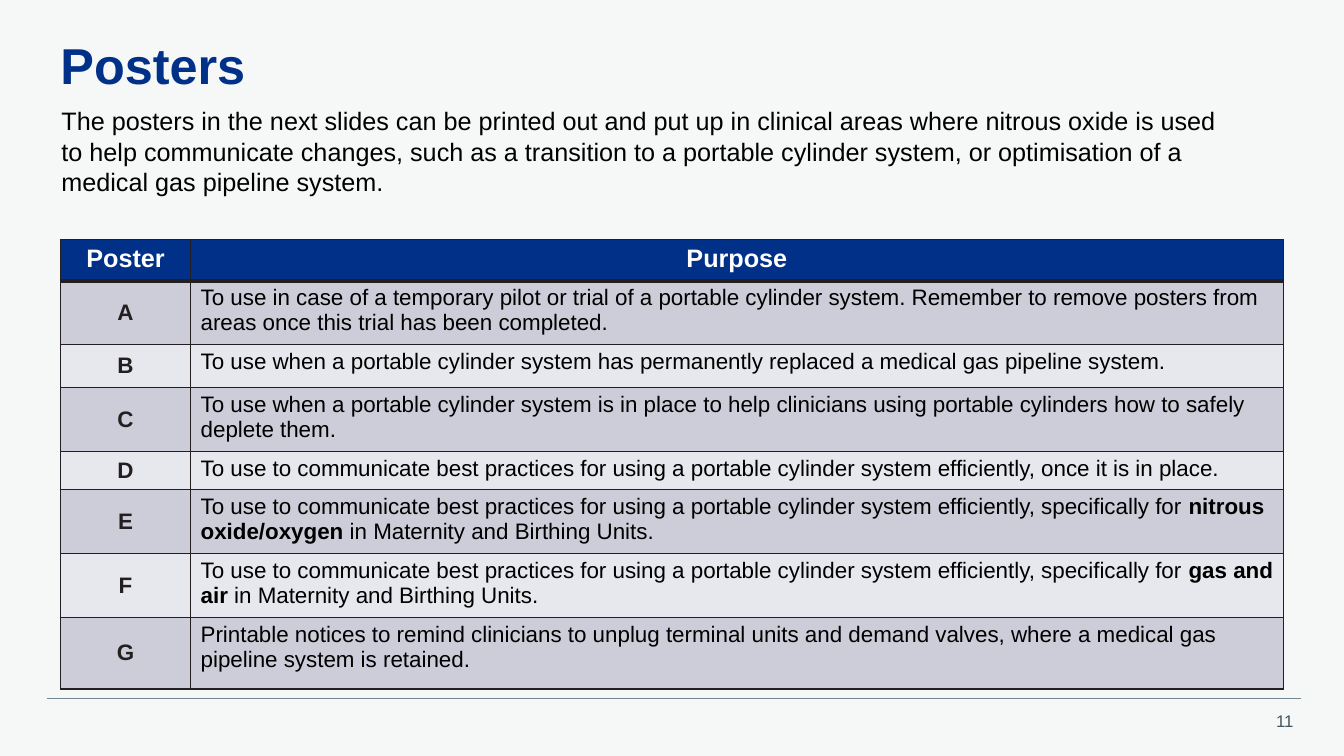
from lxml.etree import SubElement
from pptx import Presentation
from pptx.dml.color import RGBColor
from pptx.enum.shapes import MSO_CONNECTOR
from pptx.enum.text import MSO_ANCHOR, PP_ALIGN
from pptx.oxml import parse_xml
from pptx.oxml.ns import nsdecls, qn
from pptx.util import Inches, Pt

NAVY, INK, BLACK, WHITE = "003087", "231F20", "000000", "FFFFFF"
BANDS = ("CCCDD9", "E7E8ED")
EFFICIENT = ("To use to communicate best practices for using a portable "
             "cylinder system efficiently, ")

# Poster, purpose (** switches bold), row height in % of the slide
POSTERS = [
    ("A", "To use in case of a temporary pilot or trial of a portable cylinder "
          "system. Remember to remove posters from areas once this trial has "
          "been completed.", 8.4),
    ("B", "To use when a portable cylinder system has permanently replaced a "
          "medical gas pipeline system.", 5.7),
    ("C", "To use when a portable cylinder system is in place to help clinicians "
          "using portable cylinders how to safely deplete them.", 8.4),
    ("D", EFFICIENT + "once it is in place.", 5.07),
    ("E", EFFICIENT + "specifically for **nitrous oxide/oxygen **in Maternity "
          "and Birthing Units.", 8.4),
    ("F", EFFICIENT + "specifically for **gas and air **in Maternity and "
          "Birthing Units.", 8.4),
    ("G", "Printable notices to remind clinicians to unplug terminal units and "
          "demand valves, where a medical gas pipeline system is retained.", 9.47),
]


def color(value):
    return RGBColor.from_string(value)


def write(frame, text, size=16, ink=BLACK, bold=False, align=PP_ALIGN.LEFT,
          spacing=None):
    """Write one paragraph; each ** in the text switches bold."""
    paragraph = frame.paragraphs[0]
    paragraph.alignment = align
    if spacing:
        paragraph.line_spacing = spacing
    for index, part in enumerate(text.split("**")):
        run = paragraph.add_run()
        run.text = part
        run.font.name = "Arial"
        run.font.size = Pt(size)
        run.font.bold = bold != bool(index % 2)
        run.font.color.rgb = color(ink)


class PosterSlide:
    """Places elements by percentages of the slide's width and height."""

    def __init__(self, deck, background):
        self.width, self.height = deck.slide_width, deck.slide_height
        self.slide = deck.slides.add_slide(deck.slide_layouts[6])
        fill = self.slide.background.fill
        fill.solid()
        fill.fore_color.rgb = color(background)

    def x(self, share):
        return round(self.width * share / 100)

    def y(self, share):
        return round(self.height * share / 100)

    def text(self, left, top, width, height, content, inset=None,
             anchor=MSO_ANCHOR.TOP, **style):
        box = self.slide.shapes.add_textbox(
            self.x(left), self.y(top), self.x(width), self.y(height))
        frame = box.text_frame
        frame.word_wrap = True
        frame.vertical_anchor = anchor
        if inset is not None:
            frame.margin_left = frame.margin_right = inset
            frame.margin_top = frame.margin_bottom = inset
        write(frame, content, **style)

    def rule(self, left, right, top, ink, weight):
        rule = self.slide.shapes.add_connector(
            MSO_CONNECTOR.STRAIGHT, self.x(left), self.y(top),
            self.x(right), self.y(top))
        rule.line.color.rgb = color(ink)
        rule.line.width = Pt(weight)
        SubElement(rule._element.spPr, qn("a:effectLst"))

    def table(self, left, top, widths, heights):
        table = self.slide.shapes.add_table(
            len(heights), len(widths), self.x(left), self.y(top),
            self.x(sum(widths)), self.y(sum(heights))).table
        for column, share in zip(table.columns, widths):
            column.width = self.x(share)
        for row, share in zip(table.rows, heights):
            row.height = self.y(share)
        return table

    def cell(self, cell, content, fill, top=1, bottom=1,
             anchor=MSO_ANCHOR.TOP, **style):
        cell.fill.solid()
        cell.fill.fore_color.rgb = color(fill)
        cell.vertical_anchor = anchor
        properties = cell._tc.get_or_add_tcPr()
        sides = {"L": 1, "R": 1, "T": top, "B": bottom}
        for index, (side, weight) in enumerate(sides.items()):
            properties.insert(index, parse_xml(
                f'<a:ln{side} {nsdecls("a")} w="{Pt(weight)}"><a:solidFill>'
                f'<a:srgbClr val="{INK}"/></a:solidFill></a:ln{side}>'))
        write(cell.text_frame, content, **style)


def main():
    deck = Presentation()
    deck.slide_width, deck.slide_height = Inches(13.33), Inches(7.5)
    page = PosterSlide(deck, "F6F8F8")

    # Footer
    page.text(93.9, 93.33, 3.08, 4, "11", size=12, ink="425563",
              align=PP_ALIGN.RIGHT)
    page.rule(3.53, 96.83, 92.4, "768692", 0.5)

    # Poster table
    heights = [5.4] + [height for _, _, height in POSTERS]
    table = page.table(4.5, 31.73, [9.68, 81.3], heights)
    for column, heading in enumerate(("Poster", "Purpose")):
        page.cell(table.cell(0, column), heading, NAVY, bottom=3, size=18,
                  ink=WHITE, bold=True, align=PP_ALIGN.CENTER)
    for row, (poster, purpose, _) in enumerate(POSTERS, start=1):
        band = BANDS[(row - 1) % 2]
        top = 3 if row == 1 else 1
        page.cell(table.cell(row, 0), poster, band, top=top, ink=INK, bold=True,
                  anchor=MSO_ANCHOR.MIDDLE, align=PP_ALIGN.CENTER)
        page.cell(table.cell(row, 1), purpose, band, top=top)

    # Introduction and title
    page.text(3.83, 13.33, 87.45, 13.47,
              "The posters in the next slides can be printed out and put up in "
              "clinical areas where nitrous oxide is used to help communicate "
              "changes, such as a transition to a portable cylinder system, or "
              "optimisation of a medical gas pipeline system.", size=18)
    page.text(4.5, 2.67, 93.53, 12.67, "Posters", inset=0, size=36, ink=NAVY,
              bold=True, anchor=MSO_ANCHOR.MIDDLE, spacing=0.9)

    deck.save("out.pptx")


if __name__ == "__main__":
    main()
